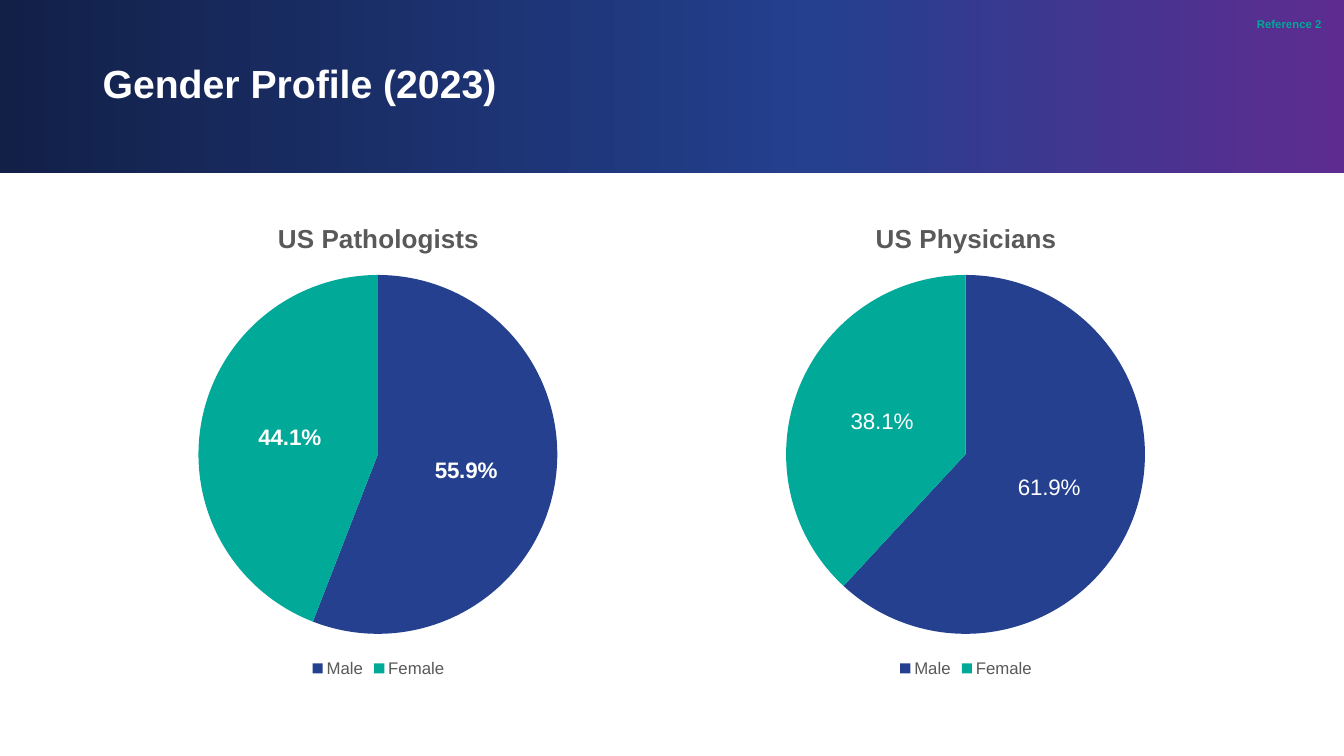
from copy import deepcopy

from lxml.etree import SubElement
from pptx import Presentation
from pptx.chart.data import CategoryChartData
from pptx.dml.color import RGBColor
from pptx.enum.chart import XL_CHART_TYPE, XL_LABEL_POSITION, XL_LEGEND_POSITION
from pptx.enum.shapes import MSO_SHAPE
from pptx.enum.text import MSO_ANCHOR, PP_ALIGN
from pptx.oxml.ns import qn
from pptx.util import Pt

NAVY = RGBColor(0x12, 0x20, 0x48)
BLUE = RGBColor(0x24, 0x40, 0x8F)
PURPLE = RGBColor(0x5E, 0x2C, 0x91)
TEAL = RGBColor(0x00, 0xA9, 0x98)
GRAY = RGBColor(0x59, 0x59, 0x59)
WHITE = RGBColor(0xFF, 0xFF, 0xFF)

SLIDE_WIDTH, SLIDE_HEIGHT = Pt(960), Pt(540)
CHART_TOP, CHART_WIDTH, CHART_HEIGHT = Pt(144), Pt(408.24), Pt(342.72)
PIE_LAYOUT = {"x": 0.185, "y": 0.153, "w": 0.628, "h": 0.748}
CATEGORY_COLORS = {"Male": BLUE, "Female": TEAL}


def format_font(font, color, **values):
    font.color.rgb = color
    for name, value in {"name": "Arial", **values}.items():
        setattr(font, name, value)


def add_banner(slide):
    banner = slide.shapes.add_shape(MSO_SHAPE.RECTANGLE, 0, 0, SLIDE_WIDTH, Pt(123.84))
    banner.shadow.inherit = False
    banner.line.fill.background()
    banner.fill.gradient()
    banner.fill.gradient_angle = 0
    stop_list = next(banner.element.iter(qn("a:gsLst")))
    stop_list.insert(1, deepcopy(stop_list[0]))
    stops = zip(banner.fill.gradient_stops, (NAVY, BLUE, PURPLE), (0, 0.61, 1))
    for stop, color, position in stops:
        stop.color.rgb = color
        stop.position = position


def add_text(slide, text, box, color, size, anchor, alignment):
    frame = slide.shapes.add_textbox(*map(Pt, box)).text_frame
    frame.word_wrap = True
    frame.vertical_anchor = anchor
    paragraph = frame.paragraphs[0]
    paragraph.alignment = alignment
    paragraph.line_spacing = 0.9
    run = paragraph.add_run()
    run.text = text
    format_font(run.font, color, size=Pt(size), bold=True)
    return run


def set_pie_layout(chart):
    """Fix the pie's place inside the chart, as fractions of the chart's size."""
    plot_area = next(chart.element.iter(qn("c:plotArea")))
    for layout in plot_area.findall(qn("c:layout")):
        plot_area.remove(layout)
    layout = SubElement(plot_area, qn("c:layout"))
    plot_area.insert(0, layout)
    manual = SubElement(layout, qn("c:manualLayout"))
    settings = {"layoutTarget": "inner", "xMode": "edge", "yMode": "edge", **PIE_LAYOUT}
    for name, value in settings.items():
        SubElement(manual, qn(f"c:{name}")).set("val", str(value))


def add_pie(slide, left, title, series_name, values, bold_labels):
    data = CategoryChartData(number_format="0.0%")
    data.categories = list(CATEGORY_COLORS)
    data.add_series(series_name, values)
    chart = slide.shapes.add_chart(
        XL_CHART_TYPE.PIE, Pt(left), CHART_TOP, CHART_WIDTH, CHART_HEIGHT, data
    ).chart
    format_font(chart.font, GRAY, size=Pt(10))
    set_pie_layout(chart)

    chart.has_title = True
    chart.chart_title.include_in_layout = False
    chart.chart_title.text_frame.text = title
    title_run = chart.chart_title.text_frame.paragraphs[0].runs[0]
    format_font(title_run.font, GRAY, size=Pt(18.6), bold=True)

    chart.has_legend = True
    chart.legend.position = XL_LEGEND_POSITION.BOTTOM
    chart.legend.include_in_layout = False
    format_font(chart.legend.font, GRAY, size=Pt(12))

    plot = chart.plots[0]
    plot.vary_by_categories = True
    for index, color in enumerate(CATEGORY_COLORS.values()):
        point_format = plot.series[0].points[index].format
        point_format.fill.solid()
        point_format.fill.fore_color.rgb = color
        point_format.line.fill.background()

    labels = plot.series[0].data_labels
    label_format = {
        "show_value": True,
        "show_percentage": False,
        "number_format": "0.0%",
        "number_format_is_linked": False,
        "position": XL_LABEL_POSITION.CENTER,
    }
    for name, value in label_format.items():
        setattr(labels, name, value)
    format_font(labels.font, WHITE, size=Pt(16), bold=bold_labels)


def main():
    presentation = Presentation()
    presentation.slide_width, presentation.slide_height = SLIDE_WIDTH, SLIDE_HEIGHT
    slide = presentation.slides.add_slide(presentation.slide_layouts[6])
    add_banner(slide)
    add_text(slide, "Gender Profile (2023)", (66.24, 7.92, 828, 107.28),
             WHITE, 28, MSO_ANCHOR.MIDDLE, PP_ALIGN.LEFT)
    reference = add_text(slide, "Reference 2", (807.12, 8.64, 144, 20.16),
                         TEAL, 14, MSO_ANCHOR.TOP, PP_ALIGN.RIGHT)
    reference.font._element.set("baseline", "30000")
    add_pie(slide, 66.24, "US Pathologists", "US Pathologists", (0.559, 0.441), True)
    add_pie(slide, 486, "US Physicians", "Series 1", (0.619, 0.381), False)
    presentation.save("out.pptx")


if __name__ == "__main__":
    main()
